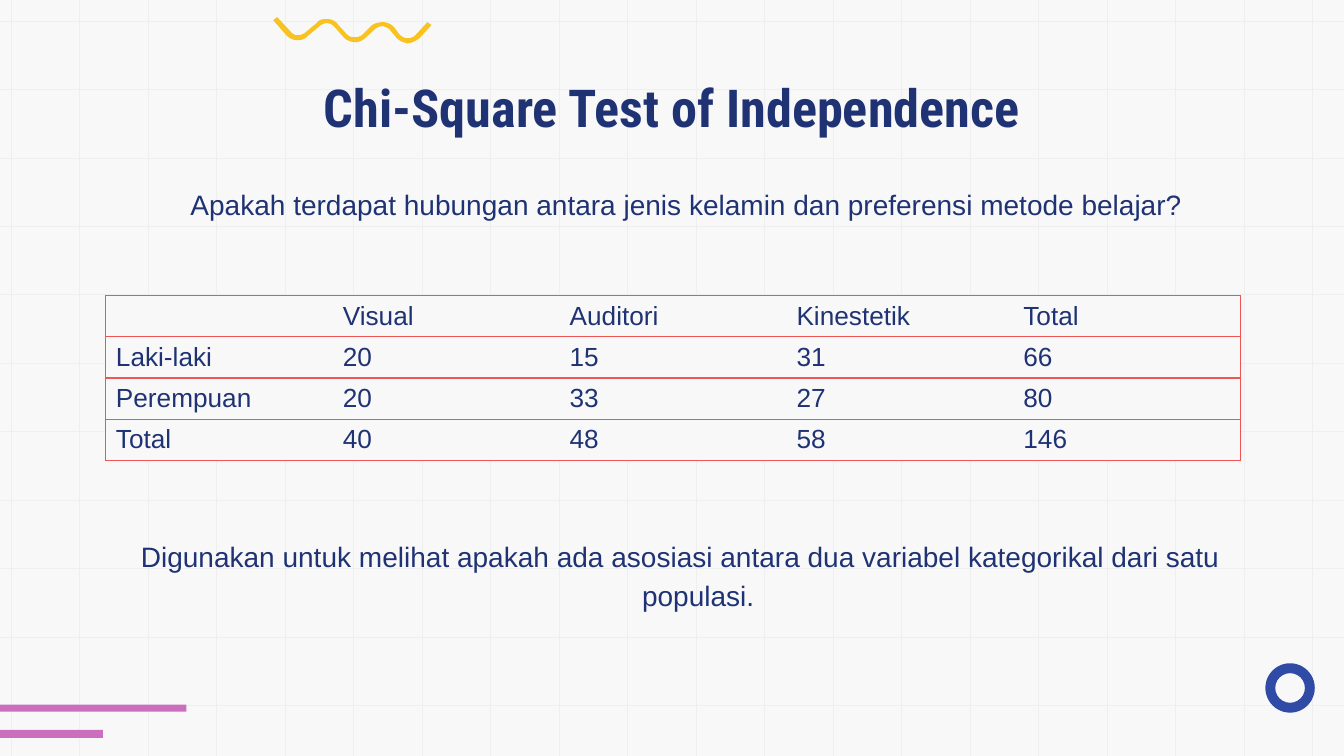
from dataclasses import dataclass

from lxml import etree
from pptx import Presentation
from pptx.dml.color import RGBColor
from pptx.enum.shapes import MSO_CONNECTOR, MSO_SHAPE
from pptx.enum.text import MSO_ANCHOR, MSO_AUTO_SIZE, PP_ALIGN
from pptx.oxml.ns import qn
from pptx.util import Inches, Pt

STRAIGHT = MSO_CONNECTOR.STRAIGHT
RECTANGLE, DONUT = MSO_SHAPE.RECTANGLE, MSO_SHAPE.DONUT
TOP, MIDDLE = MSO_ANCHOR.TOP, MSO_ANCHOR.MIDDLE
CENTER = PP_ALIGN.CENTER
NO_AUTOFIT = MSO_AUTO_SIZE.NONE


@dataclass(frozen=True)
class Theme:
    background: str = "F8F8F8"
    grid: str = "EFEFEF"
    ink: str = "1F3374"
    border: str = "F05555"
    bar: str = "CB6EBE"
    ring: str = "304BA6"
    wave: str = "F8C220"
    title_font: str = "Roboto Condensed"
    body_font: str = "Arial"
    title_size: float = 37.3
    body_size: float = 20
    table_size: float = 18.7


THEME = Theme()

TITLE = "Chi-Square Test of Independence"
STATEMENTS = [
    ("Apakah terdapat hubungan antara jenis kelamin dan preferensi metode belajar?",
     (1.05, 1.76, 11.37, 0.49)),
    ("Digunakan untuk melihat apakah ada asosiasi antara dua variabel kategorikal dari satu populasi.",
     (0.99, 5.25, 11.37, 0.88)),
]
TABLE_ROWS = [
    ["", "Visual", "Auditori", "Kinestetik", "Total"],
    ["Laki-laki", "20", "15", "31", "66"],
    ["Perempuan", "20", "33", "27", "80"],
    ["Total", "40", "48", "58", "146"],
]
SLIDE_WIDTH, SLIDE_HEIGHT = 13.33, 7.5
GRID_ROWS = (0.21, 7, 11)
GRID_COLUMNS = (0.11, 13.02, 20)
BARS = [(0, 6.99, 1.85, 0.07), (0, 7.24, 1.02, 0.08)]
RING = (12.55, 6.58, 0.49, 0.49)
WAVE_START = (2.75, 0.17)
WAVE_SEGMENTS = [
    [(2.71, 0.2)], [(2.84, 0.35)],
    [(2.87, 0.38), (2.91, 0.4), (2.95, 0.4)],
    [(2.99, 0.4), (3.02, 0.39), (3.05, 0.36)], [(3.17, 0.26)],
    [(3.19, 0.24), (3.22, 0.23), (3.24, 0.23)],
    [(3.28, 0.23), (3.3, 0.25), (3.32, 0.27)], [(3.4, 0.36)],
    [(3.43, 0.4), (3.47, 0.41), (3.51, 0.42)],
    [(3.55, 0.42), (3.59, 0.41), (3.62, 0.38)], [(3.72, 0.29)],
    [(3.74, 0.27), (3.77, 0.26), (3.8, 0.26)],
    [(3.83, 0.27), (3.86, 0.28), (3.87, 0.3)], [(3.92, 0.36)],
    [(3.95, 0.4), (3.99, 0.42), (4.04, 0.43)],
    [(4.08, 0.43), (4.12, 0.41), (4.16, 0.38)], [(4.28, 0.25)],
    [(4.24, 0.22)], [(4.12, 0.35)],
    [(4.1, 0.37), (4.07, 0.38), (4.04, 0.38)],
    [(4.01, 0.38), (3.98, 0.36), (3.96, 0.34)], [(3.91, 0.27)],
    [(3.88, 0.24), (3.84, 0.22), (3.8, 0.22)],
    [(3.76, 0.22), (3.72, 0.23), (3.69, 0.25)], [(3.59, 0.35)],
    [(3.57, 0.36), (3.55, 0.37), (3.53, 0.37)],
    [(3.52, 0.37), (3.52, 0.37), (3.51, 0.37)],
    [(3.48, 0.37), (3.46, 0.36), (3.44, 0.34)], [(3.35, 0.24)],
    [(3.33, 0.21), (3.29, 0.19), (3.25, 0.19)],
    [(3.24, 0.19), (3.24, 0.19), (3.23, 0.19)],
    [(3.19, 0.19), (3.16, 0.2), (3.14, 0.23)], [(3.02, 0.33)],
    [(3, 0.34), (2.98, 0.35), (2.95, 0.35)],
    [(2.93, 0.35), (2.9, 0.34), (2.88, 0.31)],
]
CURVE_STEPS = 8


def color(name):
    return RGBColor.from_string(name)


def inches(values):
    return [Inches(value) for value in values]


def paint(shape, fill):
    shape.shadow.inherit = False
    shape.fill.solid()
    shape.fill.fore_color.rgb = color(fill)
    shape.line.fill.background()


def set_font(paragraph, name, size, bold=False):
    paragraph.font.name = name
    paragraph.font.size = Pt(size)
    paragraph.font.bold = bold
    paragraph.font.color.rgb = color(THEME.ink)


def add_grid_line(slide, *ends):
    line = slide.shapes.add_connector(STRAIGHT, *inches(ends))
    line.line.color.rgb = color(THEME.grid)
    line.line.width = Pt(0.75)
    etree.SubElement(line.element.spPr, qn("a:effectLst"))


def positions(first, last, count):
    return [first + (last - first) * index / (count - 1) for index in range(count)]


def add_grid(slide):
    for y in positions(*GRID_ROWS):
        add_grid_line(slide, 0, y, SLIDE_WIDTH, y)
    for x in positions(*GRID_COLUMNS):
        add_grid_line(slide, x, 0, x, SLIDE_HEIGHT)


def curve_points(start, first, second, end):
    for step in range(1, CURVE_STEPS + 1):
        t = step / CURVE_STEPS
        weights = ((1 - t) ** 3, 3 * t * (1 - t) ** 2, 3 * t * t * (1 - t), t ** 3)
        yield tuple(sum(weight * point[axis] for weight, point in
                        zip(weights, (start, first, second, end))) for axis in (0, 1))


def add_decorations(slide):
    for bar in BARS:
        paint(slide.shapes.add_shape(RECTANGLE, *inches(bar)), THEME.bar)
    ring = slide.shapes.add_shape(DONUT, *inches(RING))
    ring.adjustments[0] = 0.2
    paint(ring, THEME.ring)
    outline = [WAVE_START]
    for segment in WAVE_SEGMENTS:
        outline.extend(segment if len(segment) == 1 else curve_points(outline[-1], *segment))
    builder = slide.shapes.build_freeform(*inches(WAVE_START))
    builder.add_line_segments([inches(point) for point in outline[1:]], close=True)
    paint(builder.convert_to_shape(), THEME.wave)


def add_title(slide):
    title = slide.shapes.title
    title.left, title.top, title.width, title.height = inches((1.05, 0.65, 11.23, 0.84))
    frame = title.text_frame
    frame.text = TITLE
    frame.auto_size = NO_AUTOFIT
    frame.vertical_anchor = TOP
    frame.margin_left = frame.margin_right = frame.margin_top = frame.margin_bottom = Inches(0.1)
    paragraph = frame.paragraphs[0]
    paragraph.alignment = CENTER
    set_font(paragraph, THEME.title_font, THEME.title_size, bold=True)
    title.element.getparent().append(title.element)


def add_statement(slide, text, box):
    frame = slide.shapes.add_textbox(*inches(box)).text_frame
    frame.word_wrap = True
    frame.vertical_anchor = MIDDLE
    paragraph = frame.paragraphs[0]
    paragraph.text = text
    paragraph.alignment = CENTER
    paragraph.line_spacing = 1.15
    set_font(paragraph, THEME.body_font, THEME.body_size)
    properties = paragraph._p.get_or_add_pPr()
    properties.set("marL", str(Inches(0.5)))
    properties.set("indent", str(Inches(-0.35)))


def set_borders(cell, visible_sides):
    properties = cell._tc.get_or_add_tcPr()
    for side in "LRTB":
        border = etree.SubElement(properties, qn(f"a:ln{side}"), w=str(Pt(1)))
        if side in visible_sides:
            fill = etree.SubElement(border, qn("a:solidFill"))
            etree.SubElement(fill, qn("a:srgbClr"), val=THEME.border)
        else:
            etree.SubElement(border, qn("a:noFill"))


def add_table(slide):
    row_count, column_count = len(TABLE_ROWS), len(TABLE_ROWS[0])
    box = inches((1.05, 2.93, 2.25 * column_count, 0.41 * row_count))
    table = slide.shapes.add_table(row_count, column_count, *box).table
    table.first_row = table.horz_banding = False
    edges = {0: "LTB", column_count - 1: "RTB"}
    for row_index, row in enumerate(TABLE_ROWS):
        for column_index, text in enumerate(row):
            cell = table.cell(row_index, column_index)
            cell.text = text
            cell.vertical_anchor = MIDDLE
            set_font(cell.text_frame.paragraphs[0], THEME.body_font, THEME.table_size)
            set_borders(cell, edges.get(column_index, "TB"))
            cell.fill.solid()
            cell.fill.fore_color.rgb = color(THEME.background)


def main():
    presentation = Presentation()
    presentation.slide_width, presentation.slide_height = inches((SLIDE_WIDTH, SLIDE_HEIGHT))
    slide = presentation.slides.add_slide(presentation.slide_layouts.get_by_name("Title Only"))
    slide.background.fill.solid()
    slide.background.fill.fore_color.rgb = color(THEME.background)
    add_grid(slide)
    add_decorations(slide)
    add_title(slide)
    add_table(slide)
    for text, box in STATEMENTS:
        add_statement(slide, text, box)
    presentation.save("out.pptx")


if __name__ == "__main__":
    main()
